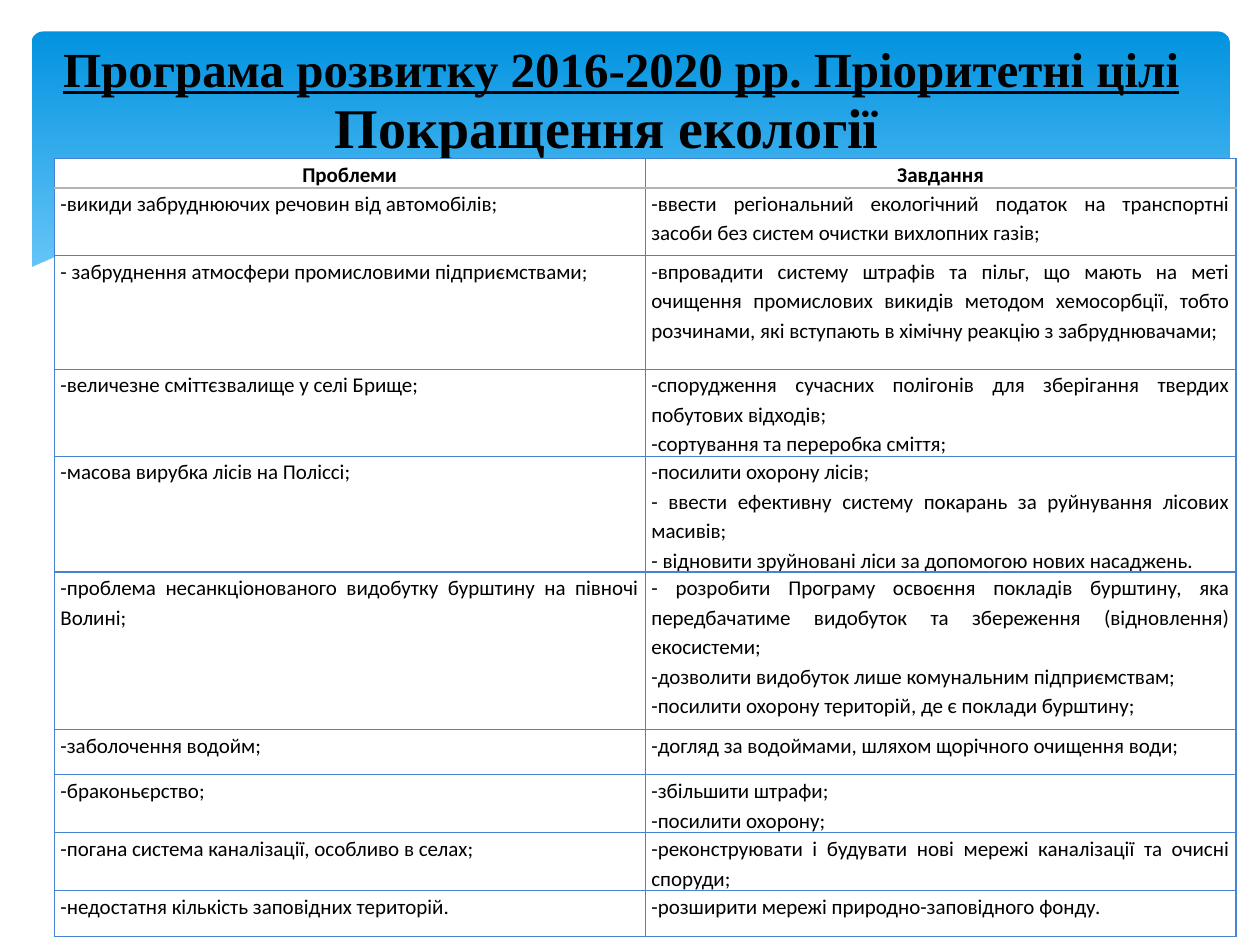
"""Build the slide on ecology priorities of the 2016-2020 development programme."""
from lxml.etree import SubElement
from pptx import Presentation
from pptx.dml.color import RGBColor
from pptx.enum.shapes import MSO_SHAPE
from pptx.enum.text import MSO_ANCHOR, PP_ALIGN
from pptx.oxml.ns import qn
from pptx.util import Inches, Pt

COLORS = {
    "sky": "0293E0",
    "pale_sky": "83D3FE",
    "white": "FFFFFF",
    "ink": "000000",
    "grid": "4584D3",
    "header_rule": "B4B4B4",
}
ROWS = [
    (0.23, "Проблеми", ["Завдання"]),
    (0.54, "-викиди забруднюючих речовин від автомобілів;",
     ["-ввести регіональний екологічний податок на транспортні засоби без систем "
      "очистки вихлопних газів;"]),
    (0.9, "- забруднення атмосфери промисловими підприємствами;",
     ["-впровадити систему штрафів та пільг, що мають на меті очищення промислових "
      "викидів методом хемосорбції, тобто розчинами, які вступають в хімічну реакцію "
      "з забруднювачами;"]),
    (0.68, "-величезне сміттєзвалище у селі Брище;",
     ["-спорудження сучасних полігонів для зберігання твердих побутових відходів;",
      "-сортування та переробка сміття;"]),
    (0.9, "-масова вирубка лісів на Поліссі;",
     ["-посилити охорону лісів;",
      "- ввести ефективну систему покарань за руйнування лісових масивів;",
      "- відновити зруйновані ліси за допомогою нових насаджень."]),
    (1.25, "-проблема несанкціонованого видобутку бурштину на півночі Волині;",
     ["- розробити Програму освоєння покладів бурштину, яка передбачатиме видобуток "
      "та збереження (відновлення) екосистеми;",
      "-дозволити видобуток лише комунальним підприємствам;",
      "-посилити охорону територій, де є поклади бурштину;"]),
    (0.36, "-заболочення водойм;",
     ["-догляд за водоймами, шляхом щорічного очищення води;"]),
    (0.45, "-браконьєрство;", ["-збільшити штрафи;", "-посилити охорону;"]),
    (0.45, "-погана система каналізації, особливо в селах;",
     ["-реконструювати і будувати нові мережі каналізації та очисні споруди;"]),
    (0.36, "-недостатня кількість заповідних територій.",
     ["-розширити мережі природно-заповідного фонду."]),
]
WAVE = [
    (0.23, 2.13), (0.46, 2.03), (0.85, 1.93), (1.32, 1.86), (1.93, 1.84),
    (2.5, 1.86), (3.16, 1.94), (3.91, 2.07), (4.47, 2.2), (5.03, 2.33),
    (5.79, 2.5), (6.48, 2.62), (7.26, 2.72), (8.09, 2.77), (8.75, 2.73),
    (9.3, 2.62), (9.77, 2.46), (9.77, 3.29), (0.23, 3.29),
]


def style_paragraph(paragraph, font_name, size, bold, align):
    paragraph.alignment = align
    paragraph.font.name = font_name
    paragraph.font.size = Pt(size)
    paragraph.font.bold = bold
    paragraph.font.color.rgb = RGBColor.from_string(COLORS["ink"])


def add_border(cell, side, color, width):
    border = SubElement(cell._tc.get_or_add_tcPr(), qn(f"a:{side}"), w=str(Pt(width)))
    solid = SubElement(border, qn("a:solidFill"))
    SubElement(solid, qn("a:srgbClr"), val=COLORS[color])


prs = Presentation()
prs.slide_width, prs.slide_height = Inches(10), Inches(7.5)
slide = prs.slides.add_slide(prs.slide_layouts[6])

banner = slide.shapes.add_shape(
    MSO_SHAPE.ROUNDED_RECTANGLE, Inches(0.25), Inches(0.25), Inches(9.51), Inches(2.7))
banner.adjustments[0] = 0.034
banner.shadow.inherit = False
banner.line.fill.background()
banner.fill.gradient()
banner.fill.gradient_angle = 270
for stop, color, position in zip(banner.fill.gradient_stops, ("sky", "pale_sky"), (0, 0.9)):
    stop.color.rgb = RGBColor.from_string(COLORS[color])
    stop.position = position

wave_points = [(Inches(x), Inches(y)) for x, y in WAVE]
wave_builder = slide.shapes.build_freeform(*wave_points[0])
wave_builder.add_line_segments(wave_points[1:], close=True)
wave = wave_builder.convert_to_shape()
wave.shadow.inherit = False
wave.line.fill.background()
wave.fill.solid()
wave.fill.fore_color.rgb = RGBColor.from_string(COLORS["white"])

for text, box, size, underline, align in [
    ("Програма розвитку 2016-2020 рр. Пріоритетні цілі",
     (0.28, -0.27, 9.3, 1.61), 28, True, PP_ALIGN.CENTER),
    ("Покращення екології", (2.56, 0.68, 5.51, 0.64), 32, False, PP_ALIGN.LEFT),
]:
    heading = slide.shapes.add_textbox(*map(Inches, box)).text_frame
    heading.word_wrap = True
    heading.vertical_anchor = MSO_ANCHOR.MIDDLE
    heading.text = text
    style_paragraph(heading.paragraphs[0], "Times New Roman", size, True, align)
    heading.paragraphs[0].font.underline = underline

goals = slide.shapes.add_table(
    len(ROWS), 2, Inches(0.43), Inches(1.26), Inches(9.37), Inches(6.12)).table
goals.first_row = goals.horz_banding = False
for column in goals.columns:
    column.width = Inches(4.69)

for row_index, (height, problem, tasks) in enumerate(ROWS):
    goals.rows[row_index].height = Inches(height)
    is_header = row_index == 0
    for cell, lines in zip(goals.rows[row_index].cells, ([problem], tasks)):
        cell.margin_left = cell.margin_right = Inches(0.05)
        cell.margin_top = cell.margin_bottom = 0
        cell.text = "\n".join(lines)
        for paragraph in cell.text_frame.paragraphs:
            style_paragraph(paragraph, "Calibri", 12, is_header,
                            PP_ALIGN.CENTER if is_header else PP_ALIGN.JUSTIFY)
            paragraph.line_spacing = 1.15
        for side in ("lnL", "lnR", "lnT", "lnB"):
            under_header = (row_index, side) in ((0, "lnB"), (1, "lnT"))
            add_border(cell, side, *(("header_rule", 1.25) if under_header else ("grid", 0.75)))
        cell.fill.solid()
        cell.fill.fore_color.rgb = RGBColor.from_string(COLORS["white"])

prs.save("out.pptx")
